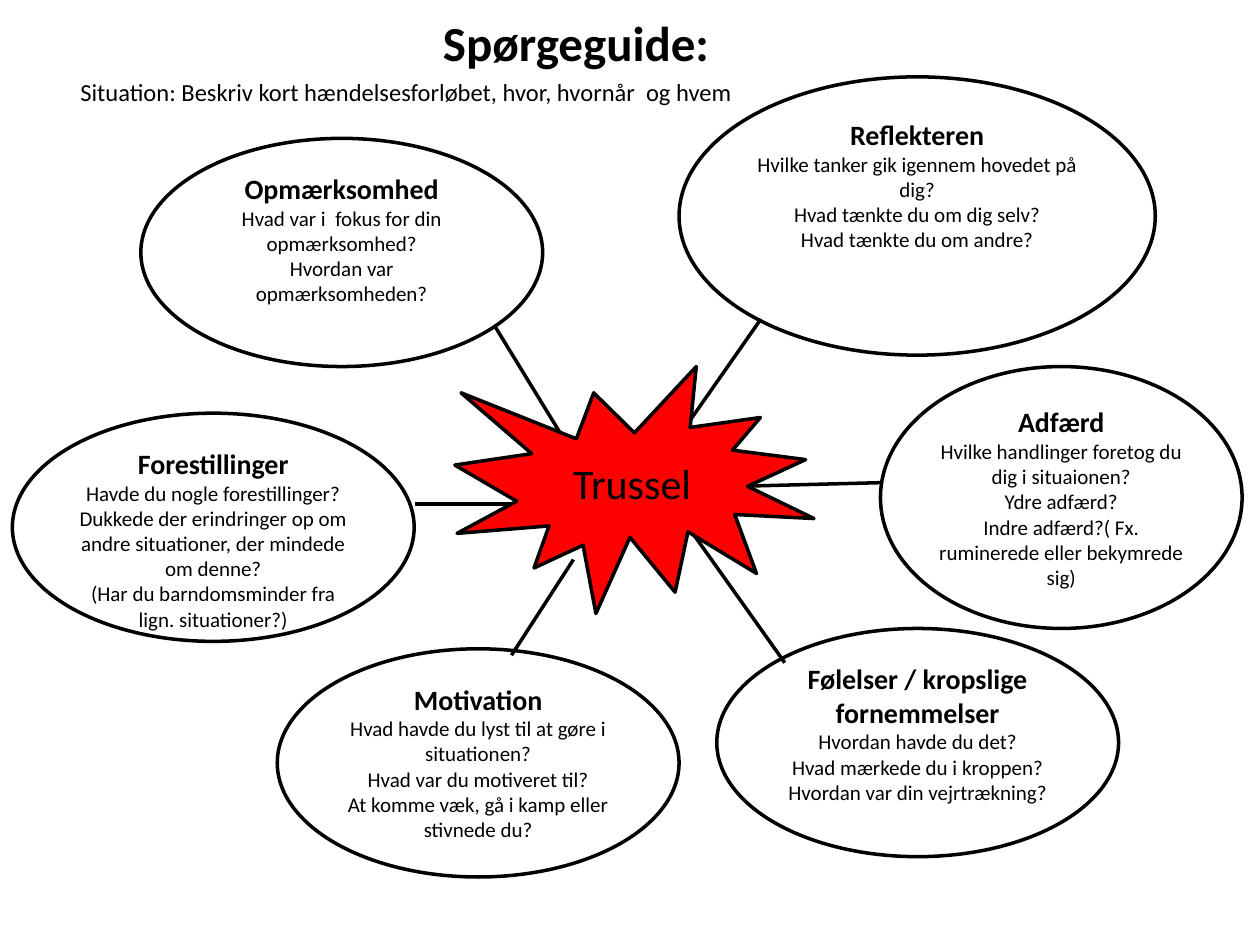
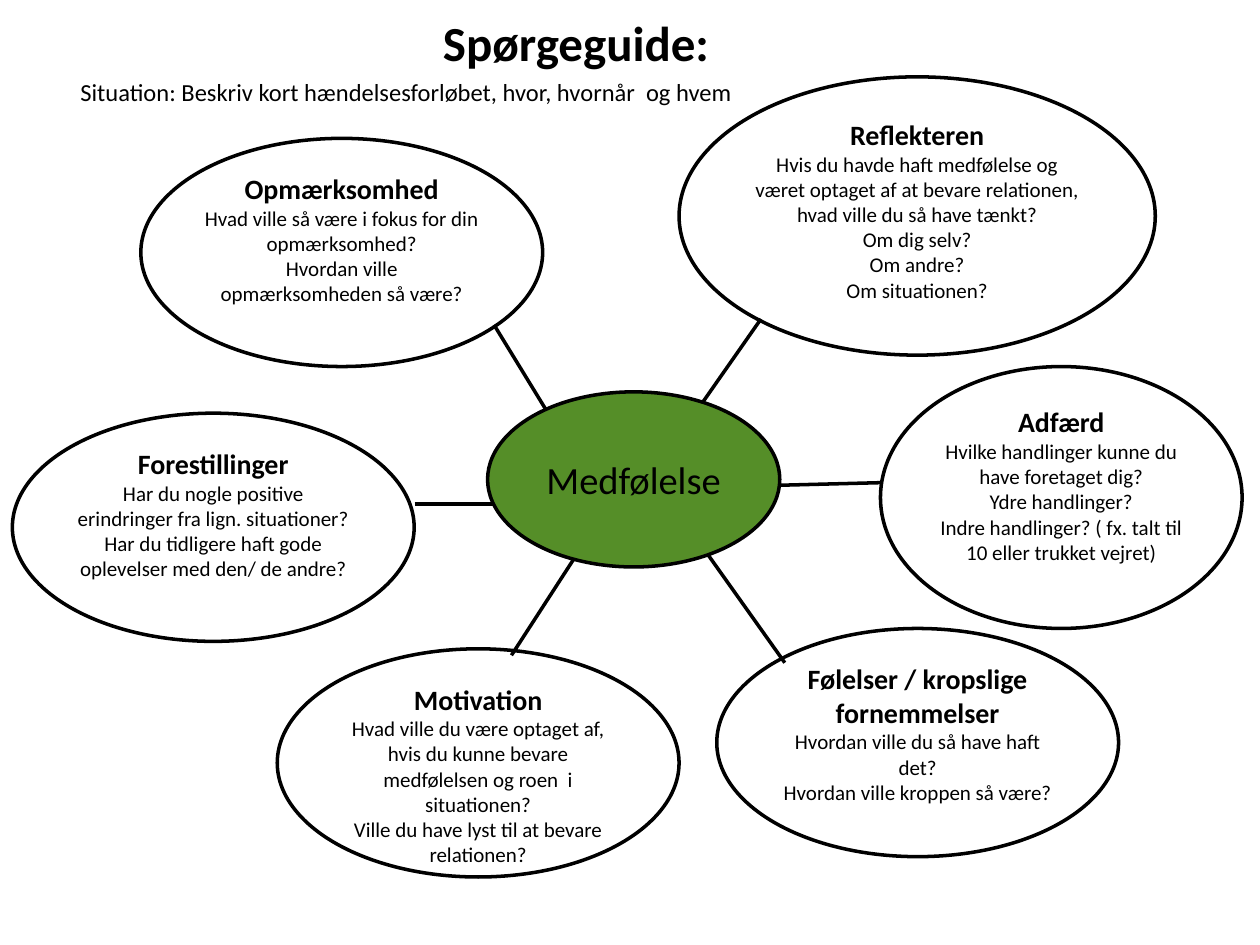
from dataclasses import dataclass
from lxml.etree import SubElement
from pptx import Presentation
from pptx.dml.color import RGBColor
from pptx.enum.shapes import MSO_CONNECTOR, MSO_SHAPE
from pptx.enum.text import MSO_ANCHOR, PP_ALIGN
from pptx.oxml.ns import qn
from pptx.util import Cm, Pt


@dataclass(frozen=True)
class Theme:
    font: str = "Calibri"
    ink: RGBColor = RGBColor(0x00, 0x00, 0x00)
    threat: RGBColor = RGBColor(0xFF, 0x00, 0x00)
    compassion: RGBColor = RGBColor(0x55, 0x8E, 0x28)
    title_size: int = 28
    threat_size: int = 24
    compassion_size: int = 22
    situation_size: int = 14
    heading_size: int = 16
    question_size: int = 12
    line_width: int = 2


TITLE = "Spørgeguide:"
SITUATION = "Situation: Beskriv kort hændelsesforløbet, hvor, hvornår  og hvem"
BUBBLE_SIZE = (8.1, 4.6)

BUBBLES = {
    "Opmærksomhed": (2.84, 2.79, *BUBBLE_SIZE),
    "Motivation": (5.59, 13.08, *BUBBLE_SIZE),
    "Følelser / kropslige fornemmelser": (14.45, 12.67, *BUBBLE_SIZE),
    "Forestillinger": (0.25, 8.33, *BUBBLE_SIZE),
    "Adfærd": (17.75, 7.39, 7.29, 5.28),
    "Reflekteren": (13.69, 1.55, 9.6, 5.61),
}

SPOKES = [
    (15.01, 9.8, 17.75, 9.73),
    (11.56, 11.28, 10.31, 13.21),
    (14, 10.8, 15.82, 13.36),
    (9.96, 6.55, 11.33, 8.79),
    (8.36, 10.16, 10.31, 10.16),
    (15.34, 6.43, 13.69, 8.79),
]

THREAT_QUESTIONS = {
    "Opmærksomhed": [
        "Hvad var i  fokus for din opmærksomhed?",
        "Hvordan var opmærksomheden?",
    ],
    "Motivation": [
        "Hvad havde du lyst til at gøre i situationen?",
        "Hvad var du motiveret til?",
        "At komme væk, gå i kamp eller stivnede du?",
    ],
    "Følelser / kropslige fornemmelser": [
        "Hvordan havde du det?",
        "Hvad mærkede du i kroppen?",
        "Hvordan var din vejrtrækning?",
    ],
    "Forestillinger": [
        "Havde du nogle forestillinger?",
        "Dukkede der erindringer op om andre situationer, der mindede om denne?",
        "(Har du barndomsminder fra lign. situationer?)",
    ],
    "Adfærd": [
        "Hvilke handlinger foretog du dig i situaionen?",
        "Ydre adfærd?",
        "Indre adfærd?( Fx. ruminerede eller bekymrede sig)",
    ],
    "Reflekteren": [
        "Hvilke tanker gik igennem hovedet på dig?",
        "Hvad tænkte du om dig selv?",
        "Hvad tænkte du om andre?",
    ],
}

COMPASSION_QUESTIONS = {
    "Opmærksomhed": [
        "Hvad ville så være i fokus for din opmærksomhed?",
        "Hvordan ville opmærksomheden så være?",
    ],
    "Motivation": [
        "Hvad ville du være optaget af, hvis du kunne bevare medfølelsen og roen  i situationen?",
        "Ville du have lyst til at bevare relationen?",
    ],
    "Følelser / kropslige fornemmelser": [
        "Hvordan ville du så have haft det?",
        "Hvordan ville kroppen så være?",
    ],
    "Forestillinger": [
        "Har du nogle positive erindringer fra lign. situationer?",
        "Har du tidligere haft gode oplevelser med den/ de andre?",
    ],
    "Adfærd": [
        "Hvilke handlinger kunne du have foretaget dig?",
        "Ydre handlinger?",
        "Indre handlinger? ( fx. talt til 10 eller trukket vejret)",
    ],
    "Reflekteren": [
        "Hvis du havde haft medfølelse og været optaget af at bevare relationen, "
        "hvad ville du så have tænkt?",
        "Om dig selv?",
        "Om andre?",
        "Om situationen?",
    ],
}


class GuidePage:
    def __init__(self, deck, theme):
        self.theme = theme
        self.page = deck.slides.add_slide(deck.slide_layouts[5])

    def add_lines(self, frame, lines, align=PP_ALIGN.CENTER, anchor=MSO_ANCHOR.TOP, inset=0.1):
        frame.word_wrap = True
        frame.vertical_anchor = anchor
        frame.margin_left = frame.margin_top = frame.margin_bottom = 0
        frame.margin_right = Cm(inset)
        for index, (text, size, bold) in enumerate(lines):
            para = frame.add_paragraph() if index else frame.paragraphs[0]
            para.alignment = align
            properties = para._p.get_or_add_pPr()
            properties.set("marL", str(Cm(inset)))
            properties.set("indent", "0")
            span = para.add_run()
            span.text = text
            span.font.name = self.theme.font
            span.font.size = Pt(size)
            span.font.bold = bold
            span.font.color.rgb = self.theme.ink

    def title(self, text):
        box = self.page.shapes.title
        box.left, box.top, box.width, box.height = map(Cm, (7.42, 0.13, 8.38, 2.24))
        self.add_lines(box.text_frame, [(text, self.theme.title_size, True)], inset=0)
        box.text_frame.margin_top = Cm(0.13)

    def situation(self, text):
        box = self.page.shapes.add_textbox(*map(Cm, (1.52, 1.55, 23.5, 0.97)))
        self.add_lines(box.text_frame, [(text, self.theme.situation_size, False)], PP_ALIGN.LEFT)

    def outlined(self, kind, place, fill=None):
        shape = self.page.shapes.add_shape(kind, *map(Cm, place))
        shape.shadow.inherit = False
        if fill is None:
            shape.fill.background()
        else:
            shape.fill.solid()
            shape.fill.fore_color.rgb = fill
        self.stroke(shape.line)
        return shape

    def stroke(self, line):
        line.color.rgb = self.theme.ink
        line.width = Pt(self.theme.line_width)

    def bubble(self, heading, questions):
        shape = self.outlined(MSO_SHAPE.OVAL, BUBBLES[heading])
        lines = [(heading, self.theme.heading_size, True)]
        lines += [(question, self.theme.question_size, False) for question in questions]
        self.add_lines(shape.text_frame, lines)

    def spoke(self, ends):
        connector = self.page.shapes.add_connector(MSO_CONNECTOR.STRAIGHT, *map(Cm, ends))
        self.stroke(connector.line)
        SubElement(connector._element.spPr, qn("a:effectLst"))

    def core(self, text, kind, place, fill, size, inset):
        shape = self.outlined(kind, place, fill)
        self.add_lines(
            shape.text_frame, [(text, size, False)], anchor=MSO_ANCHOR.MIDDLE, inset=inset
        )

    def build(self, questions, core):
        self.title(TITLE)
        for heading, lines in questions.items():
            self.bubble(heading, lines)
        for ends in SPOKES:
            self.spoke(ends)
        self.situation(SITUATION)
        self.core(*core)


def main():
    theme = Theme()
    deck = Presentation()
    deck.slide_width, deck.slide_height = Cm(25.4), Cm(19.05)
    threat = (
        "Trussel", MSO_SHAPE.EXPLOSION1, (9.17, 7.39, 7.24, 4.98),
        theme.threat, theme.threat_size, 0.23,
    )
    compassion = (
        "Medfølelse", MSO_SHAPE.OVAL, (9.83, 7.9, 5.89, 3.53),
        theme.compassion, theme.compassion_size, 0.1,
    )
    GuidePage(deck, theme).build(THREAT_QUESTIONS, threat)
    GuidePage(deck, theme).build(COMPASSION_QUESTIONS, compassion)
    deck.save("out.pptx")


if __name__ == "__main__":
    main()
